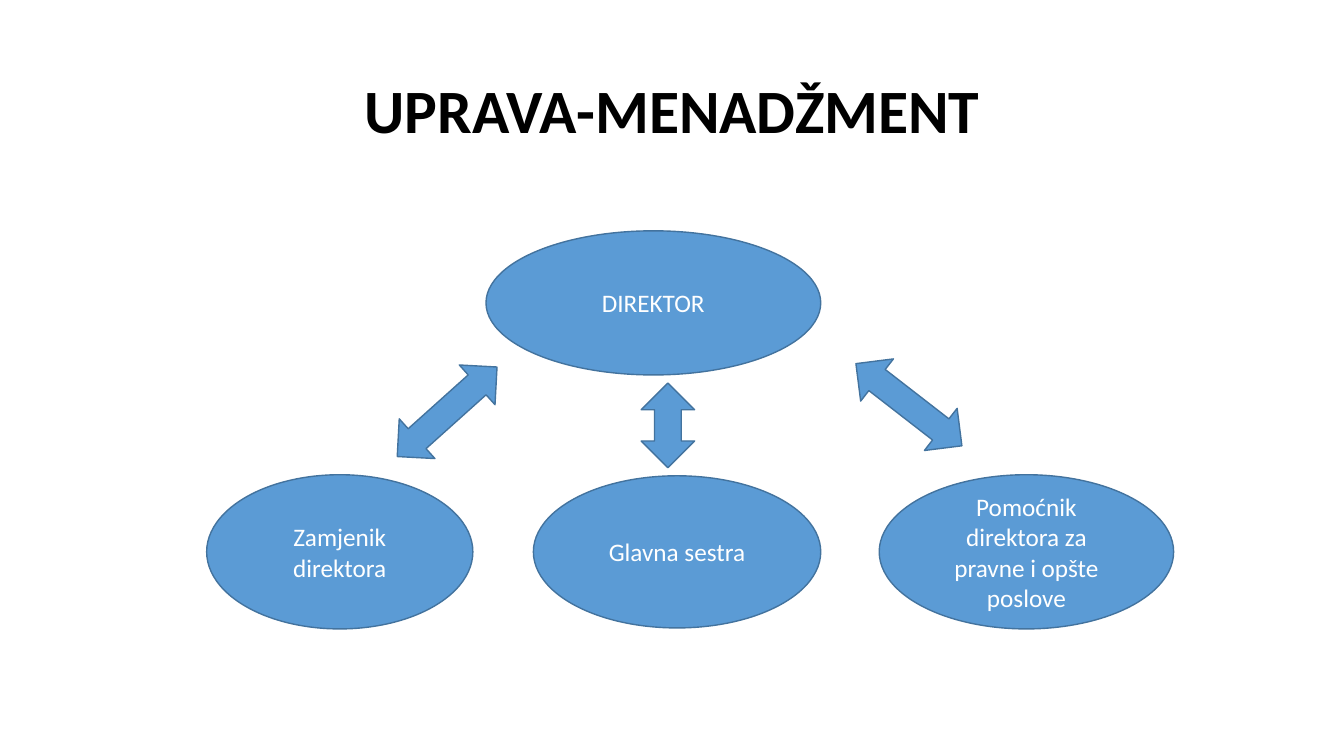
from pptx import Presentation
from pptx.dml.color import RGBColor
from pptx.enum.shapes import MSO_SHAPE
from pptx.enum.text import MSO_ANCHOR, PP_ALIGN
from pptx.util import Inches, Pt

ELLIPSE = MSO_SHAPE.OVAL
HORIZONTAL_ARROW = MSO_SHAPE.LEFT_RIGHT_ARROW
VERTICAL_ARROW = MSO_SHAPE.UP_DOWN_ARROW
MIDDLE = MSO_ANCHOR.MIDDLE
CENTER = PP_ALIGN.CENTER

BLUE = RGBColor(0x5B, 0x9B, 0xD5)
DARK_BLUE = RGBColor(0x43, 0x73, 0x9E)
WHITE = RGBColor(0xFF, 0xFF, 0xFF)
BLACK = RGBColor(0x00, 0x00, 0x00)

TITLE_FONT = {"name": "Calibri", "size": Pt(44), "bold": True}
ROLE_FONT = {"name": "Calibri", "size": Pt(18), "bold": False}

TITLE_BOX = (0.92, 0.4, 11.5, 1.45)
CHART_BOX = (2.05, 2.29, 9.59, 3.95)

# Left, top, width and height are relative to the chart box.
ROLES = [
    ("DIREKTOR", (2.77, 0, 3.32, 1.43)),
    ("Zamjenik direktora", (0, 2.42, 2.64, 1.53)),
    ("Glavna sestra", (3.24, 2.43, 2.85, 1.51)),
    ("Pomoćnik direktora za pravne i opšte poslove", (6.67, 2.42, 2.92, 1.53)),
]
ARROWS = [
    (HORIZONTAL_ARROW, (1.72, 1.53, 1.33, 0.53), 318.1),
    (VERTICAL_ARROW, (4.31, 1.51, 0.53, 0.84), 0),
    (VERTICAL_ARROW, (6.7, 1.06, 0.53, 1.33), 307.8),
]


def write_text(shape, text, font_format, color):
    frame = shape.text_frame
    frame.text = text
    frame.word_wrap = True
    frame.vertical_anchor = MIDDLE
    paragraph = frame.paragraphs[0]
    paragraph.alignment = CENTER
    font = paragraph.runs[0].font
    for name, value in font_format.items():
        setattr(font, name, value)
    font.color.rgb = color
    return paragraph


def add_title(slide, box):
    title = slide.shapes.title
    for name, value in zip(("left", "top", "width", "height"), box):
        setattr(title, name, Inches(value))
    paragraph = write_text(title, "UPRAVA-MENADŽMENT", TITLE_FONT, BLACK)
    paragraph.line_spacing = 0.9


def add_blue_shape(slide, kind, origin, place):
    """Add an outlined shape at a place relative to the origin."""
    left, top, width, height = place
    shape = slide.shapes.add_shape(
        kind, Inches(origin[0] + left), Inches(origin[1] + top),
        Inches(width), Inches(height))
    shape.shadow.inherit = False
    shape.fill.solid()
    shape.fill.fore_color.rgb = BLUE
    shape.line.color.rgb = DARK_BLUE
    shape.line.width = Pt(1)
    return shape


def add_management_chart(slide, box):
    origin = box[:2]
    for text, place in ROLES:
        ellipse = add_blue_shape(slide, ELLIPSE, origin, place)
        write_text(ellipse, text, ROLE_FONT, WHITE)
    for kind, place, rotation in ARROWS:
        arrow = add_blue_shape(slide, kind, origin, place)
        arrow.rotation = rotation


def main():
    presentation = Presentation()
    presentation.slide_width = Inches(13.33)
    presentation.slide_height = Inches(7.5)
    title_only = presentation.slide_layouts.get_by_name("Title Only")
    slide = presentation.slides.add_slide(title_only)
    add_title(slide, TITLE_BOX)
    add_management_chart(slide, CHART_BOX)
    presentation.save("out.pptx")


if __name__ == "__main__":
    main()
